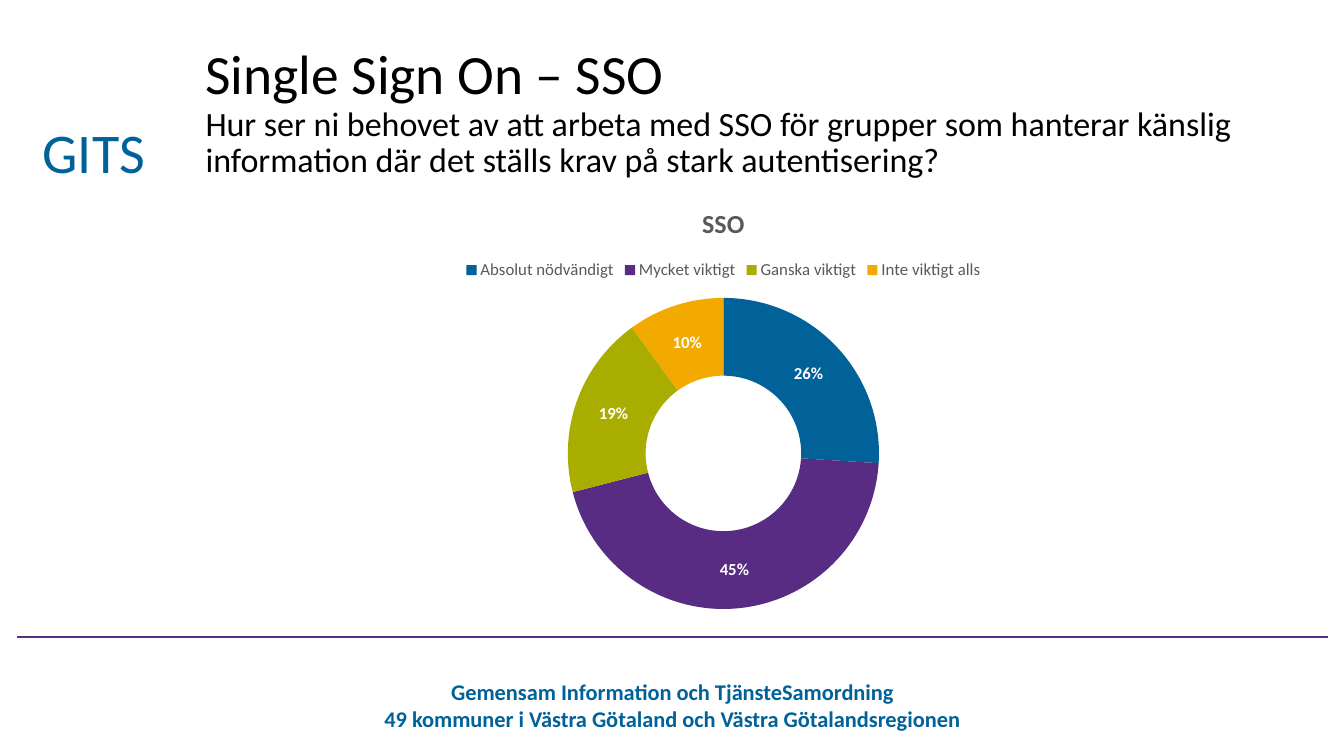
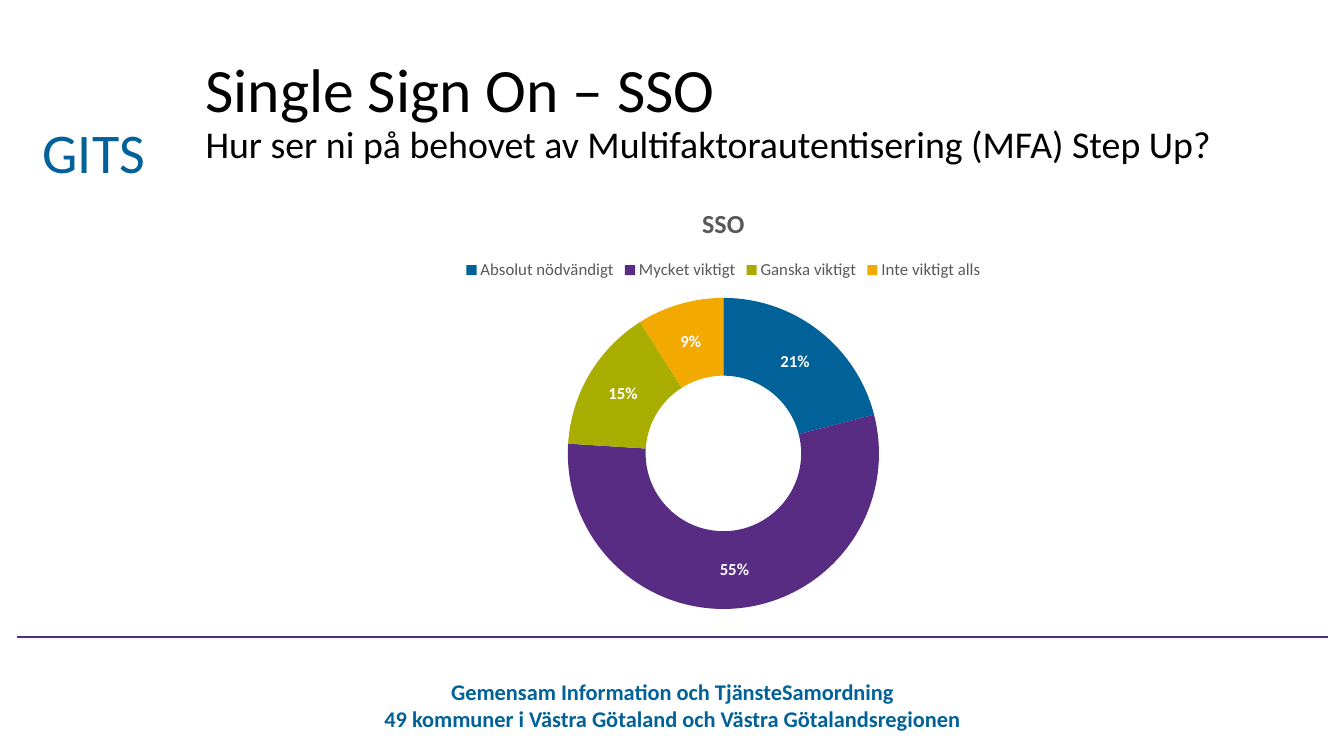
"""Build two survey slides about Single Sign On, each with a doughnut chart."""
from dataclasses import dataclass

from lxml import etree
from pptx import Presentation
from pptx import util as u
from pptx.chart.data import CategoryChartData
from pptx.dml.color import RGBColor
from pptx.enum import chart as charts
from pptx.enum import shapes, text
from pptx.oxml.ns import qn


@dataclass(frozen=True)
class Theme:
    """Colours, font and type sizes shared by the slides."""
    font: str = "Calibri"
    black: RGBColor = RGBColor(0x00, 0x00, 0x00)
    white: RGBColor = RGBColor(0xFF, 0xFF, 0xFF)
    grey: RGBColor = RGBColor(0x59, 0x59, 0x59)
    blue: RGBColor = RGBColor(0x00, 0x62, 0x98)
    purple: RGBColor = RGBColor(0x58, 0x2C, 0x83)
    green: RGBColor = RGBColor(0xA8, 0xAD, 0x00)
    orange: RGBColor = RGBColor(0xF2, 0xA9, 0x00)
    brand_size: float = 40
    footer_size: float = 16
    chart_title_size: float = 18.6
    chart_text_size: float = 12
    chart_base_size: float = 10


THEME = Theme()
SLICE_COLOURS = (THEME.blue, THEME.purple, THEME.green, THEME.orange)
ANSWERS = ("Absolut nödvändigt", "Mycket viktigt", "Ganska viktigt", "Inte viktigt alls")
FOOTER = ("Gemensam Information och TjänsteSamordning",
          "49 kommuner i Västra Götaland och Västra Götalandsregionen")
HEADING = "Single Sign On – SSO"
CONTENT_LEFT, CONTENT_WIDTH = 1.94, 10.47
SURVEYS = (
    ("Hur ser ni behovet av att arbeta med SSO för grupper som hanterar känslig "
     "information där det ställs krav på stark autentisering?",
     39.6, 24.3, (26, 45, 19, 10)),
    ("Hur ser ni på behovet av Multifaktorautentisering (MFA) Step Up?",
     44, 27, (21, 55, 15, 9)),
)


def style_font(font, size, colour, bold=False):
    """Apply the theme font with a size and colour."""
    font.name = THEME.font
    font.size = u.Pt(size)
    font.color.rgb = colour
    font.bold = bold


def add_run(paragraph, content, size, colour, bold=False):
    """Append one styled run to a paragraph."""
    run = paragraph.add_run()
    run.text = content
    style_font(run.font, size, colour, bold)


def add_text_frame(slide, left, top, width, height):
    """Add a wrapping text box and return its text frame."""
    box = slide.shapes.add_textbox(*map(u.Inches, (left, top, width, height)))
    box.text_frame.word_wrap = True
    return box.text_frame


def add_centred_lines(slide, area, lines, size, bold=False):
    """Add centred blue paragraphs, one for each line."""
    frame = add_text_frame(slide, *area)
    frame.auto_size = text.MSO_AUTO_SIZE.SHAPE_TO_FIT_TEXT
    for index, line in enumerate(lines):
        paragraph = frame.add_paragraph() if index else frame.paragraphs[0]
        paragraph.alignment = text.PP_ALIGN.CENTER
        add_run(paragraph, line, size, THEME.blue, bold)


def add_rule(slide, left, right, top):
    """Add the thin purple line above the footer."""
    rule = slide.shapes.add_connector(
        shapes.MSO_CONNECTOR.STRAIGHT, *map(u.Inches, (left, top, right, top)))
    rule.line.color.rgb = THEME.purple
    rule.line.width = u.Pt(1)
    properties = rule.element.find(qn("p:spPr"))
    etree.SubElement(properties, qn("a:effectLst"))


def add_frame(slide):
    """Add the footer, name and line that every slide shares."""
    add_centred_lines(slide, (3.18, 6.68, 6.98, 0.64), FOOTER, THEME.footer_size, bold=True)
    add_centred_lines(slide, (0.31, 1.12, 1.24, 0.77), ("GITS",), THEME.brand_size)
    add_rule(slide, 0.17, 13.17, 6.32)


def add_title(slide, question, heading_size, question_size):
    """Add the heading with its question on the next line."""
    frame = add_text_frame(slide, CONTENT_LEFT, 0.4, CONTENT_WIDTH, 1.45)
    frame.vertical_anchor = text.MSO_ANCHOR.MIDDLE
    paragraph = frame.paragraphs[0]
    paragraph.line_spacing = 0.9
    add_run(paragraph, HEADING, heading_size, THEME.black)
    paragraph.add_line_break()
    add_run(paragraph, question, question_size, THEME.black)


def add_doughnut(slide, values):
    """Add the doughnut chart of survey answers."""
    data = CategoryChartData()
    data.categories = ANSWERS
    data.add_series("SSO", values)
    area = map(u.Inches, (CONTENT_LEFT, 1.85, CONTENT_WIDTH, 4.33))
    chart = slide.shapes.add_chart(charts.XL_CHART_TYPE.DOUGHNUT, *area, data).chart
    style_font(chart.font, THEME.chart_base_size, THEME.black)

    chart.has_title = True
    add_run(chart.chart_title.text_frame.paragraphs[0], "SSO",
            THEME.chart_title_size, THEME.grey, bold=True)
    chart.chart_title.include_in_layout = False

    chart.has_legend = True
    chart.legend.position = charts.XL_LEGEND_POSITION.TOP
    chart.legend.include_in_layout = False
    style_font(chart.legend.font, THEME.chart_text_size, THEME.grey)

    plot = chart.plots[0]
    plot.vary_by_categories = True
    for index, colour in enumerate(SLICE_COLOURS):
        point = plot.series[0].points[index]
        point.format.fill.solid()
        point.format.fill.fore_color.rgb = colour
        point.format.line.fill.background()

    plot.has_data_labels = True
    labels = plot.data_labels
    labels.show_percentage = True
    labels.show_value = False
    labels.number_format = "0%"
    labels.number_format_is_linked = False
    style_font(labels.font, THEME.chart_text_size, THEME.white, bold=True)


def main():
    """Build and save the presentation."""
    presentation = Presentation()
    presentation.slide_width = u.Inches(13.33)
    presentation.slide_height = u.Inches(7.5)
    for question, heading_size, question_size, values in SURVEYS:
        slide = presentation.slides.add_slide(presentation.slide_layouts[6])
        add_frame(slide)
        add_title(slide, question, heading_size, question_size)
        add_doughnut(slide, values)
    presentation.save("out.pptx")


if __name__ == "__main__":
    main()
